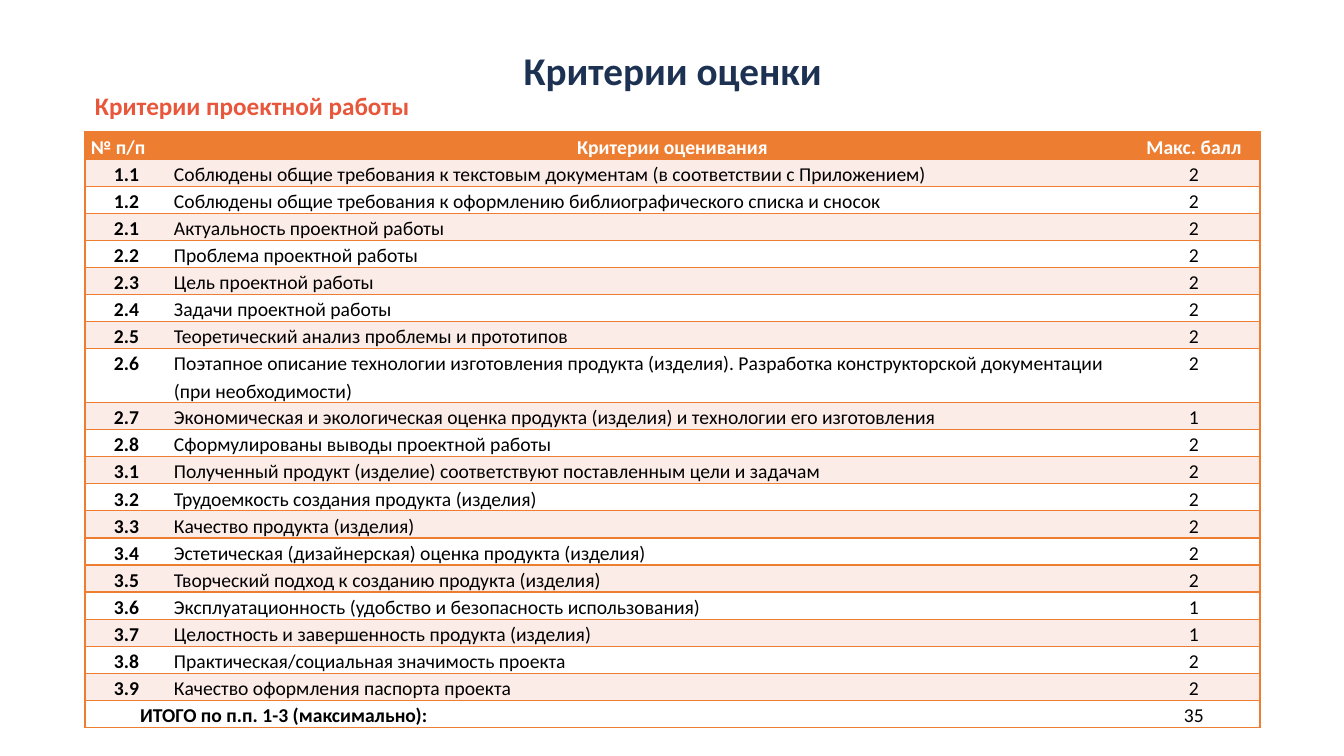
from lxml import etree
from pptx import Presentation
from pptx.dml.color import RGBColor
from pptx.enum.text import MSO_ANCHOR, PP_ALIGN
from pptx.oxml.ns import qn
from pptx.util import Pt

TITLE = "Критерии оценки"
SUBTITLE = "Критерии проектной работы"
HEADER = ("№ п/п", "Критерии оценивания", "Макс. балл")
CRITERIA = [
    ("1.1", "Соблюдены общие требования к текстовым документам (в соответствии с Приложением)", "2"),
    ("1.2", "Соблюдены общие требования к оформлению библиографического списка и сносок", "2"),
    ("2.1", "Актуальность проектной работы", "2"),
    ("2.2", "Проблема проектной работы", "2"),
    ("2.3", "Цель проектной работы", "2"),
    ("2.4", "Задачи проектной работы", "2"),
    ("2.5", "Теоретический анализ проблемы и прототипов", "2"),
    ("2.6", "Поэтапное описание технологии изготовления продукта (изделия). "
            "Разработка конструкторской документации (при необходимости)", "2"),
    ("2.7", "Экономическая и экологическая оценка продукта (изделия) и технологии его изготовления", "1"),
    ("2.8", "Сформулированы выводы проектной работы", "2"),
    ("3.1", "Полученный продукт (изделие) соответствуют поставленным цели и задачам", "2"),
    ("3.2", "Трудоемкость создания продукта (изделия)", "2"),
    ("3.3", "Качество продукта (изделия)", "2"),
    ("3.4", "Эстетическая (дизайнерская) оценка продукта (изделия)", "2"),
    ("3.5", "Творческий подход к созданию продукта (изделия)", "2"),
    ("3.6", "Эксплуатационность (удобство и безопасность использования)", "1"),
    ("3.7", "Целостность и завершенность продукта (изделия)", "1"),
    ("3.8", "Практическая/социальная значимость проекта", "2"),
    ("3.9", "Качество оформления паспорта проекта", "2"),
]
TOTAL = ("ИТОГО по п.п. 1-3 (максимально):", "", "35")
JUSTIFIED = {"1.2", "2.8", "3.5", "3.6", "3.7", "3.9"}
TWO_LINE = {"2.6"}

NAVY, CORAL, ORANGE = "1D3152", "E8573B", "ED7D31"
BLUSH, WHITE, BLACK = "FCECE8", "FFFFFF", "000000"

SLIDE_SIZE = (1344, 756)
LEFT, WIDTH = 85, 1175
TITLE_BOX = (LEFT, 38, WIDTH, 64)
SUBTITLE_BOX = (LEFT, 81, WIDTH, 43)
TABLE_TOP = 132
COLUMNS = (83, 960, 132)
LINE_HEIGHT = 27
TOTAL_INDENT, SCORE_INDENT = 49, -7


def px(length):
    return round(length * 12192000 / SLIDE_SIZE[0])


def color(code):
    return RGBColor.from_string(code)


def write(frame, text, size, ink, bold=True, align=PP_ALIGN.LEFT, spacing=1.15, indent=0):
    paragraph = frame.paragraphs[0]
    paragraph.alignment = align
    paragraph.line_spacing = spacing
    if indent:
        properties = paragraph._p.get_or_add_pPr()
        properties.set("marL", "0")
        properties.set("indent", str(px(indent)))
    run = paragraph.add_run()
    run.text = text
    for name, value in {"name": "Calibri", "size": Pt(size), "bold": bold}.items():
        setattr(run.font, name, value)
    run.font.color.rgb = color(ink)


def add_heading(slide, box, text, size, ink, inset, **layout):
    frame = slide.shapes.add_textbox(*map(px, box)).text_frame
    frame.word_wrap = True
    frame.vertical_anchor = MSO_ANCHOR.MIDDLE if text == TITLE else MSO_ANCHOR.TOP
    frame.margin_left = frame.margin_right = px(inset)
    frame.margin_top = frame.margin_bottom = px(5)
    write(frame, text, size, ink, **layout)


def set_borders(cell, column):
    """Draw row lines and the outer frame; leave inner columns unruled."""
    drawn = {"lnL": column == 0, "lnR": column == len(COLUMNS) - 1, "lnT": True, "lnB": True}
    properties = cell._tc.get_or_add_tcPr()
    for position, (edge, visible) in enumerate(drawn.items()):
        line = etree.Element(qn("a:" + edge), w=str(Pt(1)))
        if visible:
            fill = etree.SubElement(line, qn("a:solidFill"))
            etree.SubElement(fill, qn("a:srgbClr"), val=ORANGE)
        else:
            etree.SubElement(line, qn("a:noFill"))
        properties.insert(position, line)


def cell_format(row, column, number):
    """Return the text format for a cell of the header, a criterion or the total."""
    is_header, is_total = row == 0, row == len(CRITERIA) + 1
    layout = {"ink": WHITE if is_header else BLACK, "align": PP_ALIGN.CENTER,
              "bold": is_header or column == 0}
    if is_header:
        if column == 0:
            layout["align"] = PP_ALIGN.LEFT
        elif column == 1:
            layout["indent"] = TOTAL_INDENT
    elif is_total:
        if column == 0:
            layout.update(align=PP_ALIGN.LEFT, indent=TOTAL_INDENT)
    elif column == 1:
        layout["align"] = PP_ALIGN.JUSTIFY if number in JUSTIFIED else PP_ALIGN.LEFT
    elif column == 2:
        layout["indent"] = SCORE_INDENT
    return layout


def add_criteria_table(slide):
    rows = [HEADER, *CRITERIA, TOTAL]
    heights = [LINE_HEIGHT * (2 if number in TWO_LINE else 1) for number, *_ in rows]
    bounds = (LEFT, TABLE_TOP, WIDTH, sum(heights))
    table = slide.shapes.add_table(len(rows), len(COLUMNS), *map(px, bounds)).table
    for column, width in enumerate(COLUMNS):
        table.columns[column].width = px(width)
    table.cell(len(rows) - 1, 0).merge(table.cell(len(rows) - 1, 1))
    for row, values in enumerate(rows):
        table.rows[row].height = px(heights[row])
        background = ORANGE if row == 0 else (BLUSH if row % 2 else WHITE)
        for column, text in enumerate(values):
            cell = table.cell(row, column)
            cell.margin_left = cell.margin_right = px(6)
            cell.margin_top = cell.margin_bottom = 0
            cell.fill.solid()
            cell.fill.fore_color.rgb = color(background)
            set_borders(cell, column)
            if not cell.is_spanned:
                write(cell.text_frame, text, 14, **cell_format(row, column, values[0]))


def main():
    deck = Presentation()
    deck.slide_width, deck.slide_height = map(px, SLIDE_SIZE)
    slide = deck.slides.add_slide(deck.slide_layouts[6])
    add_heading(slide, TITLE_BOX, TITLE, 28, NAVY, 5, align=PP_ALIGN.CENTER, spacing=1.0)
    add_heading(slide, SUBTITLE_BOX, SUBTITLE, 18, CORAL, 10)
    add_criteria_table(slide)
    deck.save("out.pptx")


if __name__ == "__main__":
    main()
